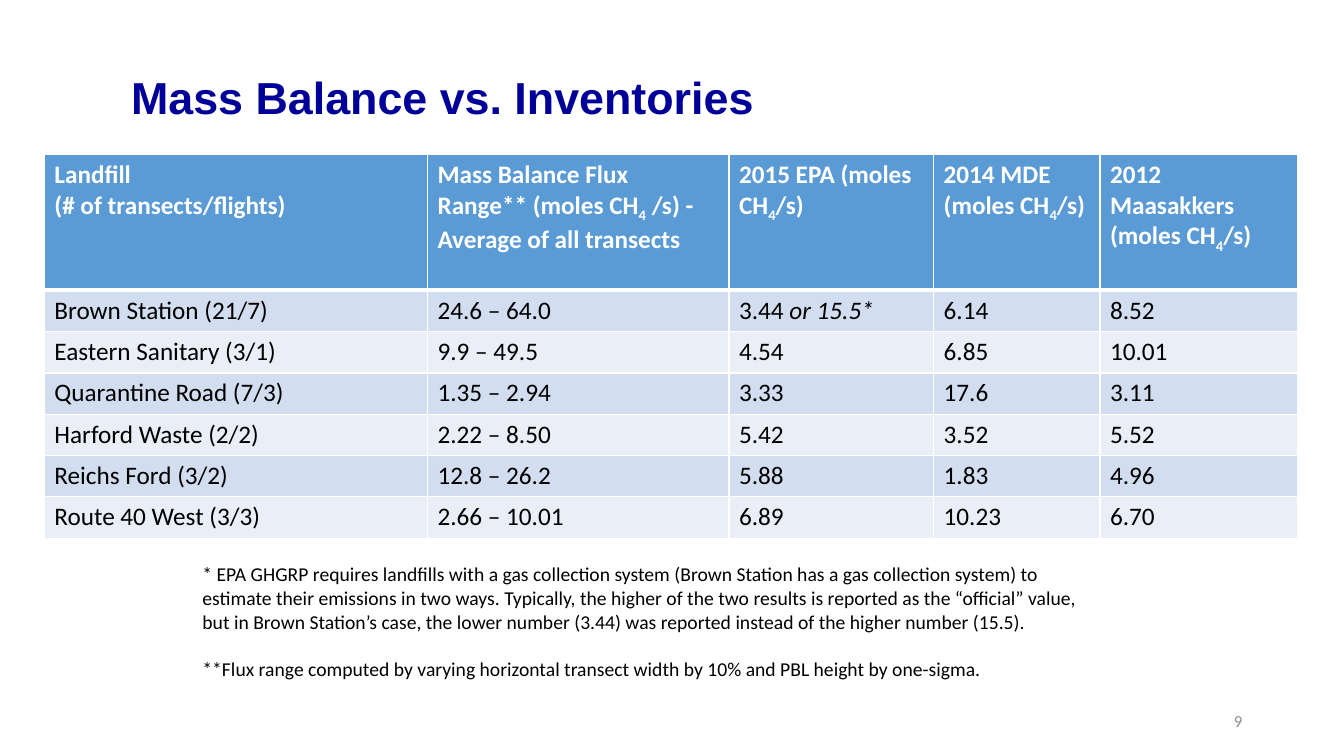
from dataclasses import dataclass

from lxml.etree import SubElement
from pptx import Presentation
from pptx.dml.color import RGBColor
from pptx.enum.text import MSO_ANCHOR, MSO_AUTO_SIZE, PP_ALIGN
from pptx.oxml.ns import qn
from pptx.util import Inches, Pt


@dataclass(frozen=True)
class Theme:
    """Hold the colours, fonts and type sizes of the slide."""
    navy: str = "000099"
    header: str = "5B9BD5"
    bands: tuple = ("D2DEEF", "EAEFF7")
    white: str = "FFFFFF"
    black: str = "000000"
    grey: str = "8C8C8C"
    heading_font: str = "Arial"
    body_font: str = "Calibri"
    title_size: int = 32
    table_size: int = 18
    note_size: int = 14
    number_size: int = 12


THEME = Theme()
COLUMN_WIDTHS = (3.8, 2.99, 2.03, 1.65, 1.96)
HEADER_HEIGHT, ROW_HEIGHT = 1.35, 0.41

HEADERS = (
    "Landfill\n(# of transects/flights)",
    "Mass Balance Flux Range** (moles CH|4| /s) - Average of all transects",
    "2015 EPA (moles CH|4|/s)",
    "2014 MDE (moles CH|4|/s)",
    "2012 Maasakkers (moles CH|4|/s)",
)
LANDFILLS = (
    ("Brown Station (21/7)", "24.6 – 64.0", "3.44 |or 15.5*", "6.14", "8.52"),
    ("Eastern Sanitary (3/1)", "9.9 – 49.5", "4.54", "6.85", "10.01"),
    ("Quarantine Road (7/3)", "1.35 – 2.94", "3.33", "17.6", "3.11"),
    ("Harford Waste (2/2)", "2.22 – 8.50", "5.42", "3.52", "5.52"),
    ("Reichs Ford (3/2)", "12.8 – 26.2", "5.88", "1.83", "4.96"),
    ("Route 40 West (3/3)", "2.66 – 10.01", "6.89", "10.23", "6.70"),
)
FOOTNOTES = (
    "* EPA GHGRP requires landfills with a gas collection system (Brown Station has a gas "
    "collection system) to estimate their emissions in two ways. Typically, the higher of the "
    "two results is reported as the “official” value, but in Brown Station’s case, the lower "
    "number (3.44) was reported instead of the higher number (15.5).",
    "**Flux range computed by varying horizontal transect width by 10% and PBL height by "
    "one-sigma.",
)


def apply_format(target, values):
    """Set each attribute of the target from a dict."""
    for attribute, value in values.items():
        setattr(target, attribute, value)


def style_font(font, size, color, name=THEME.body_font, bold=False):
    """Give a font its face, size, weight and colour."""
    apply_format(font, {"name": name, "size": Pt(size), "bold": bold})
    font.color.rgb = RGBColor.from_string(color)


def add_text_area(slide, box, anchor=MSO_ANCHOR.TOP):
    """Add a wrapping text box and return its frame."""
    frame = slide.shapes.add_textbox(*map(Inches, box)).text_frame
    apply_format(frame, {"word_wrap": True, "vertical_anchor": anchor})
    return frame


def add_title(slide, box):
    """Place the heading in the title placeholder."""
    heading = slide.shapes.title
    apply_format(heading, dict(zip(("left", "top", "width", "height"), map(Inches, box))))
    frame = heading.text_frame
    frame.text = "Mass Balance vs. Inventories"
    apply_format(frame, {"vertical_anchor": MSO_ANCHOR.MIDDLE, "word_wrap": True,
                         "auto_size": MSO_AUTO_SIZE.NONE})
    line = frame.paragraphs[0]
    apply_format(line, {"alignment": PP_ALIGN.LEFT, "line_spacing": 0.9})
    style_font(line.runs[0].font, THEME.title_size, THEME.navy, THEME.heading_font, True)


def add_borders(cell, is_header, follows_header):
    """Draw white cell borders, thick where the header meets the body."""
    thickness = {"lnL": 1, "lnR": 1, "lnT": 3 if follows_header else 1,
                 "lnB": 3 if is_header else 1}
    properties = cell._tc.get_or_add_tcPr()
    for side, points in thickness.items():
        edge = SubElement(properties, qn(f"a:{side}"), w=str(Pt(points)))
        SubElement(SubElement(edge, qn("a:solidFill")), qn("a:srgbClr"), val=THEME.white)


def fill_cell(cell, content, row):
    """Write a cell; text after a bar is a header subscript or a body italic."""
    is_header = row == 0
    add_borders(cell, is_header, row == 1)
    cell.fill.solid()
    background = THEME.header if is_header else THEME.bands[(row - 1) % 2]
    cell.fill.fore_color.rgb = RGBColor.from_string(background)
    for index, line in enumerate(content.split("\n")):
        frame = cell.text_frame
        paragraph = frame.add_paragraph() if index else frame.paragraphs[0]
        for position, part in enumerate(line.split("|")):
            run = paragraph.add_run()
            run.text = part
            style_font(run.font, THEME.table_size,
                       THEME.white if is_header else THEME.black, bold=is_header)
            if position % 2 and is_header:
                run._r.get_or_add_rPr().set("baseline", "-25000")
            elif position % 2:
                run.font.italic = True


def add_inventory_table(slide, left, top):
    """Build the landfill table with its top left corner at the given point."""
    rows = (HEADERS, *LANDFILLS)
    heights = (HEADER_HEIGHT, *[ROW_HEIGHT] * len(LANDFILLS))
    size = (sum(COLUMN_WIDTHS), sum(heights))
    table = slide.shapes.add_table(len(rows), len(HEADERS),
                                   *map(Inches, (left, top, *size))).table
    for column, width in zip(table.columns, COLUMN_WIDTHS):
        column.width = Inches(width)
    for row, (contents, height) in enumerate(zip(rows, heights)):
        table.rows[row].height = Inches(height)
        for column, content in enumerate(contents):
            fill_cell(table.cell(row, column), content, row)


def add_footnotes(slide, box):
    """Write the two notes below the table."""
    frame = add_text_area(slide, box)
    for index, note in enumerate(FOOTNOTES):
        paragraph = frame.add_paragraph() if index else frame.paragraphs[0]
        paragraph.text = note
        if index:
            paragraph.space_before = Pt(17)
        style_font(paragraph.runs[0].font, THEME.note_size, THEME.black)


def add_page_number(slide, box):
    """Write the page number against the right edge of its box."""
    line = add_text_area(slide, box, MSO_ANCHOR.MIDDLE).paragraphs[0]
    apply_format(line, {"text": "9", "alignment": PP_ALIGN.RIGHT})
    style_font(line.runs[0].font, THEME.number_size, THEME.grey)


def main():
    """Build the slide and save it."""
    presentation = Presentation()
    apply_format(presentation, {"slide_width": Inches(13.33), "slide_height": Inches(7.5)})
    slide = presentation.slides.add_slide(presentation.slide_layouts.get_by_name("Title Only"))
    add_inventory_table(slide, 0.44, 1.53)
    add_title(slide, (1.2, 0.46, 6.75, 1.07))
    add_footnotes(slide, (1.91, 5.53, 9, 1.51))
    add_page_number(slide, (9.42, 6.95, 3, 0.4))
    presentation.save("out.pptx")


if __name__ == "__main__":
    main()
